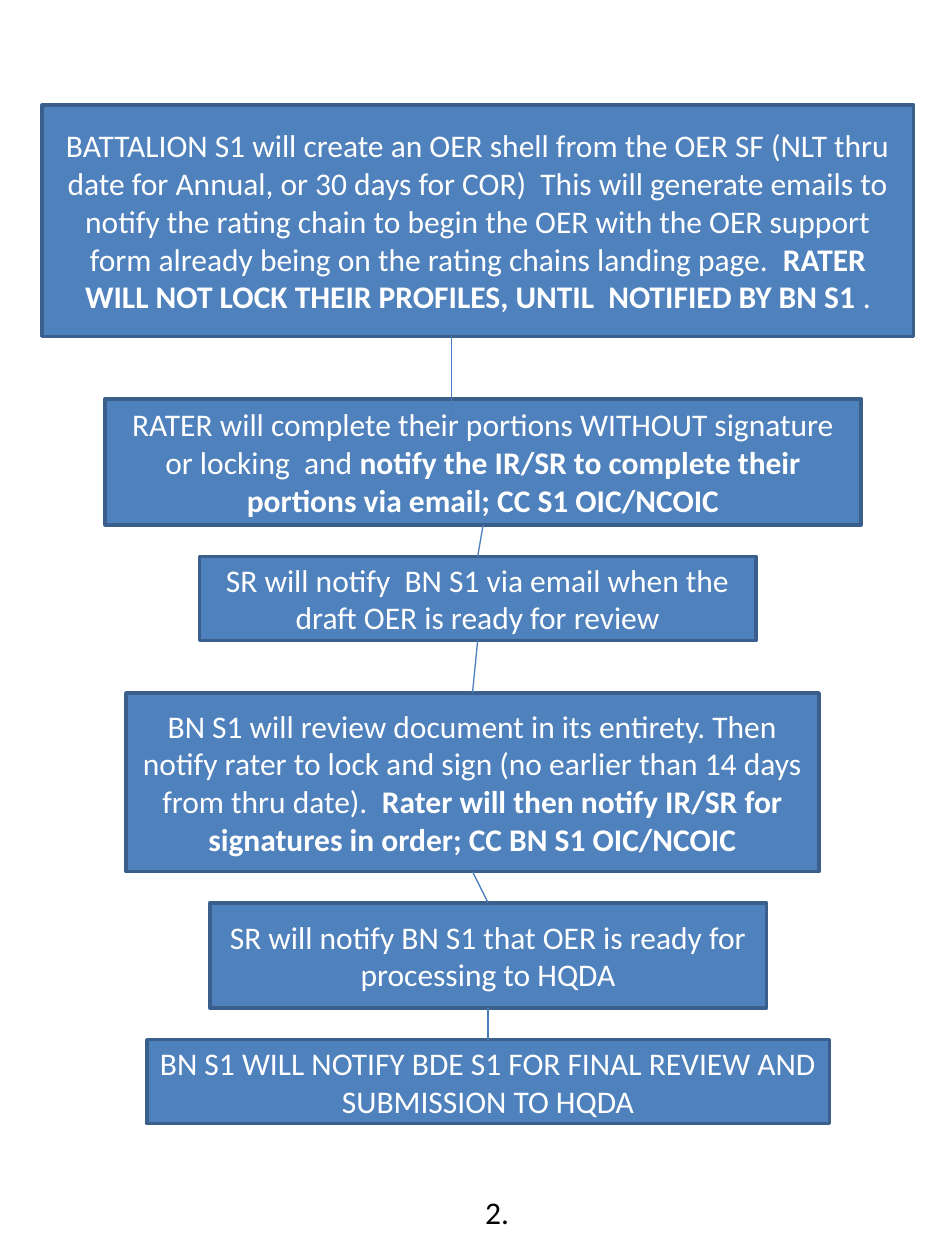
from lxml import etree
from pptx import Presentation
from pptx.dml.color import RGBColor
from pptx.enum.shapes import MSO_CONNECTOR, MSO_SHAPE
from pptx.enum.text import MSO_ANCHOR, MSO_AUTO_SIZE, PP_ALIGN
from pptx.oxml.ns import qn
from pptx.util import Cm, Pt

PROCESS = MSO_SHAPE.FLOWCHART_PROCESS
STRAIGHT = MSO_CONNECTOR.STRAIGHT
MIDDLE = MSO_ANCHOR.MIDDLE
CENTER = PP_ALIGN.CENTER
GROW = MSO_AUTO_SIZE.SHAPE_TO_FIT_TEXT
BLANK_LAYOUT = 6
TOP, BOTTOM = 0, 2

FONT = "Calibri"
BOX_FILL, BOX_LINE, LINK = "4F81BD", "3A5F8C", "4B7EBC"
WHITE, BLACK = "FFFFFF", "000000"

# Each step: box (left, top, width, height in cm) and its (text, bold) runs
STEPS = [
    ((0.85, 2.12, 17.57, 4.66), [
        ("BATTALION S1 will create an OER shell from the OER SF (NLT thru date "
         "for Annual, or 30 days for COR)  This will generate emails to notify "
         "the rating chain to begin the OER with the OER support form already "
         "being on the rating chains landing page.  ", False),
        ("RATER WILL NOT LOCK THEIR PROFILES, UNTIL  NOTIFIED BY BN S1 ", True),
        (".", False)]),
    ((2.12, 8.04, 15.24, 2.54), [
        ("RATER will complete their portions WITHOUT signature or locking  and ",
         False),
        ("notify the IR/SR to complete their portions via email; "
         "CC S1 OIC/NCOIC", True)]),
    ((4.02, 11.22, 11.22, 1.69), [
        ("SR will notify  BN S1 via email when the draft OER is ready for review",
         False)]),
    ((2.54, 13.97, 13.97, 3.6), [
        ("BN S1 will review document in its entirety. Then notify rater to lock "
         "and sign (no earlier than 14 days from thru date).  ", False),
        ("Rater will then notify IR/SR for signatures in order; "
         "CC BN S1 OIC/NCOIC", True)]),
    ((4.23, 18.2, 11.22, 2.12), [
        ("SR will notify BN S1 that OER is ready for processing to HQDA", False)]),
    ((2.96, 20.96, 13.76, 1.69), [
        ("BN S1 WILL NOTIFY BDE S1 FOR FINAL REVIEW AND SUBMISSION TO HQDA",
         False)]),
]


def color(hex_string):
    return RGBColor.from_string(hex_string)


def add_runs(paragraph, runs, hex_string):
    for text, bold in runs:
        run = paragraph.add_run()
        run.text = text
        run.font.name = FONT
        run.font.size = Pt(18)
        run.font.bold = bold
        run.font.color.rgb = color(hex_string)


def add_step(slide, box, runs):
    shape = slide.shapes.add_shape(PROCESS, *map(Cm, box))
    shape.shadow.inherit = False
    shape.fill.solid()
    shape.fill.fore_color.rgb = color(BOX_FILL)
    shape.line.color.rgb = color(BOX_LINE)
    shape.line.width = Pt(2)
    shape.text_frame.word_wrap = True
    shape.text_frame.vertical_anchor = MIDDLE
    paragraph = shape.text_frame.paragraphs[0]
    paragraph.alignment = CENTER
    add_runs(paragraph, runs, WHITE)
    return shape


def add_link(slide, start=(0, 0), end=(0, 0)):
    connector = slide.shapes.add_connector(
        STRAIGHT, *map(Cm, start), *map(Cm, end))
    connector.line.color.rgb = color(LINK)
    connector.line.width = Pt(0.75)
    etree.SubElement(connector._element.spPr, qn("a:effectLst"))
    return connector


def add_flow(slide, steps):
    shapes = [add_step(slide, box, runs) for box, runs in steps]
    # The first link stands left of the centre and runs into the second box
    left, top, width, height = steps[0][0]
    link_x, bottom = left + 8.25, top + height
    add_link(slide, (link_x, bottom), (link_x, bottom + 1.69))
    # The other links join the middles of facing sides
    for upper, lower in zip(shapes[1:], shapes[2:]):
        connector = add_link(slide)
        connector.begin_connect(upper, BOTTOM)
        connector.end_connect(lower, TOP)


def add_page_number(slide, box, text):
    text_frame = slide.shapes.add_textbox(*map(Cm, box)).text_frame
    text_frame.word_wrap = True
    text_frame.auto_size = GROW
    add_runs(text_frame.paragraphs[0], [(text, False)], BLACK)


def main():
    presentation = Presentation()
    presentation.slide_width = Cm(19.05)
    presentation.slide_height = Cm(25.4)
    slide = presentation.slides.add_slide(
        presentation.slide_layouts[BLANK_LAYOUT])
    add_flow(slide, STEPS)
    add_page_number(slide, (9.53, 23.92, 1.06, 1.02), "2.")
    presentation.save("out.pptx")


if __name__ == "__main__":
    main()
